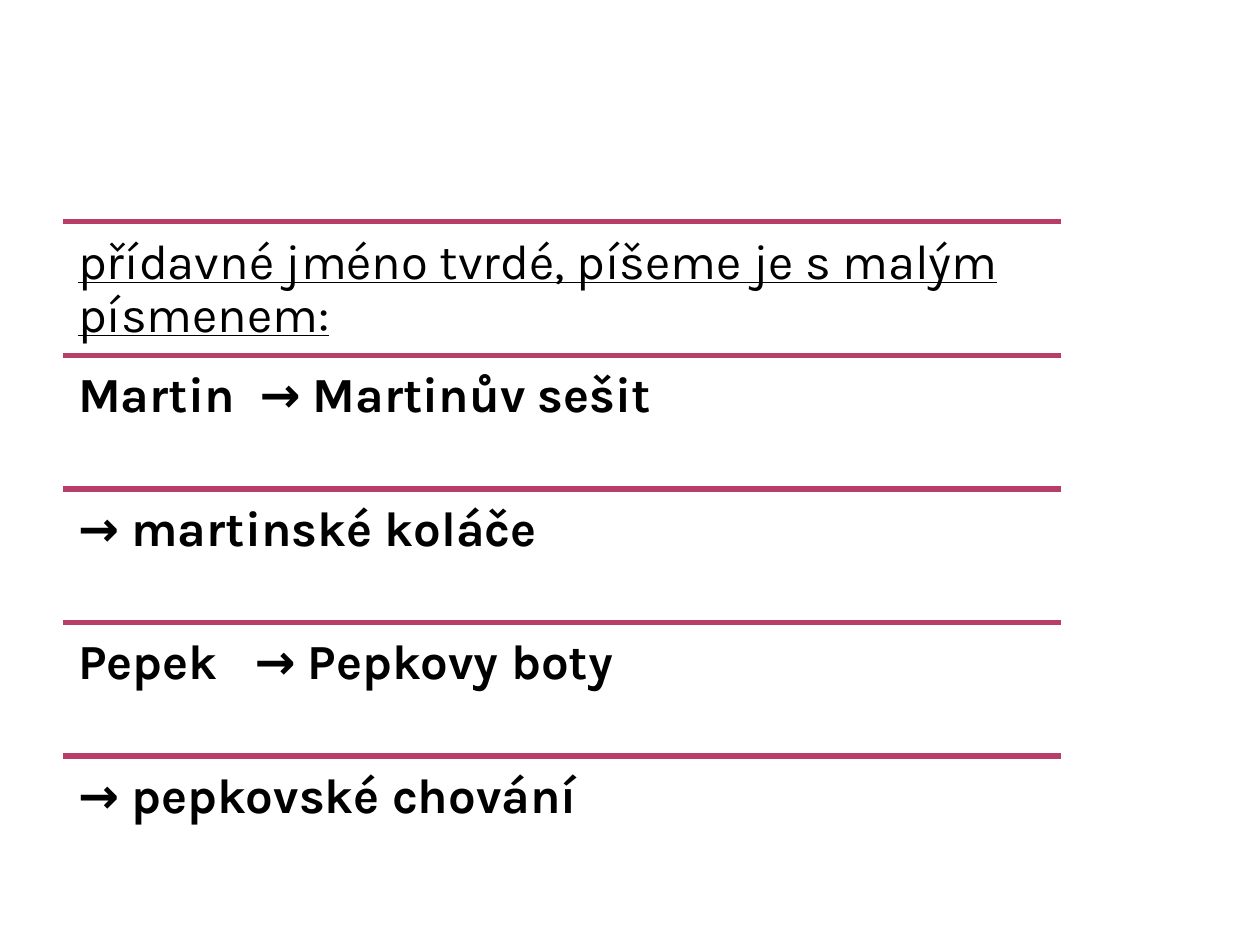
from dataclasses import dataclass

import pptx
import pptx.dml.color
import pptx.enum.shapes
import pptx.enum.text
import pptx.oxml
import pptx.oxml.ns
import pptx.presentation
import pptx.slide
import pptx.text.text
import pptx.util

Inches = pptx.util.Inches
Pt = pptx.util.Pt

LEFT, TOP, WIDTH, ROW_HEIGHT = 0.5, 1.76, 7.92, 1.06
INSET = 0.12
RULE_COLOR = "B83D68"
TEXT_COLOR = "000000"


@dataclass(frozen=True)
class Row:
    text: str
    bold: bool = True
    underline: bool = False
    arrow_at: float | None = None  # tab stop of the arrow, in inches


ROWS = [
    Row("přídavné jméno tvrdé, píšeme je s\u00a0malým písmenem:", bold=False, underline=True),
    Row("Martin\t→ Martinův sešit", arrow_at=1.44),
    Row("→ martinské koláče"),
    Row("Pepek\t→ Pepkovy boty", arrow_at=1.4),
    Row("→ pepkovské chování"),
]


def rgb(color: str) -> pptx.dml.color.RGBColor:
    return pptx.dml.color.RGBColor.from_string(color)


def add_tab_stop(paragraph: pptx.text.text._Paragraph, position: float) -> None:
    properties = paragraph._p.get_or_add_pPr()
    tabs = pptx.oxml.ns.qn("a:tabLst")
    tab_list = properties.makeelement(tabs, {})
    properties.append(tab_list)
    tab = tab_list.makeelement(
        pptx.oxml.ns.qn("a:tab"), {"pos": str(Inches(position)), "algn": "l"}
    )
    tab_list.append(tab)


def add_text(
    slide: pptx.slide.Slide,
    text: str,
    *,
    top: float,
    size: float = 28,
    bold: bool = False,
    underline: bool = False,
    tab_stop: float | None = None,
) -> None:
    box = slide.shapes.add_textbox(Inches(LEFT), Inches(top), Inches(WIDTH), Inches(ROW_HEIGHT))
    frame = box.text_frame
    frame.word_wrap = True
    frame.vertical_anchor = pptx.enum.text.MSO_ANCHOR.TOP
    frame.margin_left = frame.margin_right = Inches(INSET)
    frame.margin_top = frame.margin_bottom = Inches(INSET)
    paragraph = frame.paragraphs[0]
    paragraph.line_spacing = 0.9
    if tab_stop is not None:
        add_tab_stop(paragraph, tab_stop)
    run = paragraph.add_run()
    run.text = text
    run.font.name = "Karla"
    run.font.size = Pt(size)
    run.font.bold = bold
    run.font.underline = underline
    run.font.color.rgb = rgb(TEXT_COLOR)


def add_rule(slide: pptx.slide.Slide, top: float) -> None:
    rule = slide.shapes.add_connector(
        pptx.enum.shapes.MSO_CONNECTOR.STRAIGHT,
        Inches(LEFT), Inches(top), Inches(LEFT + WIDTH), Inches(top),
    )
    rule.line.color.rgb = rgb(RULE_COLOR)
    rule.line.width = Pt(3.15)
    properties = rule._element.spPr
    properties.append(properties.makeelement(pptx.oxml.ns.qn("a:effectLst"), {}))


def main() -> None:
    presentation = pptx.Presentation()
    presentation.slide_width = Inches(10)
    presentation.slide_height = Inches(7.5)
    slide = presentation.slides.add_slide(presentation.slide_layouts[6])
    for index, row in enumerate(ROWS):
        top = TOP + index * ROW_HEIGHT
        add_rule(slide, top)
        add_text(slide, row.text, top=top, bold=row.bold,
                 underline=row.underline, tab_stop=row.arrow_at)
    presentation.save("out.pptx")


if __name__ == "__main__":
    main()
